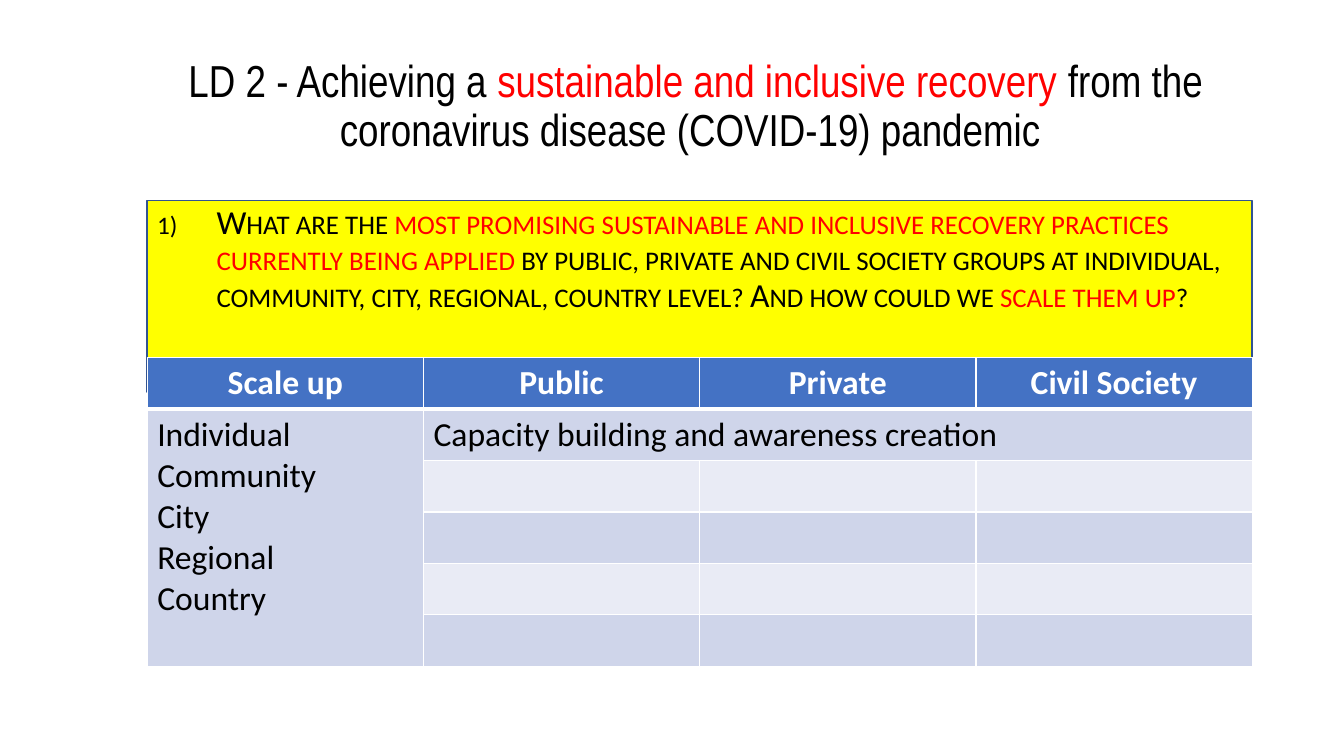
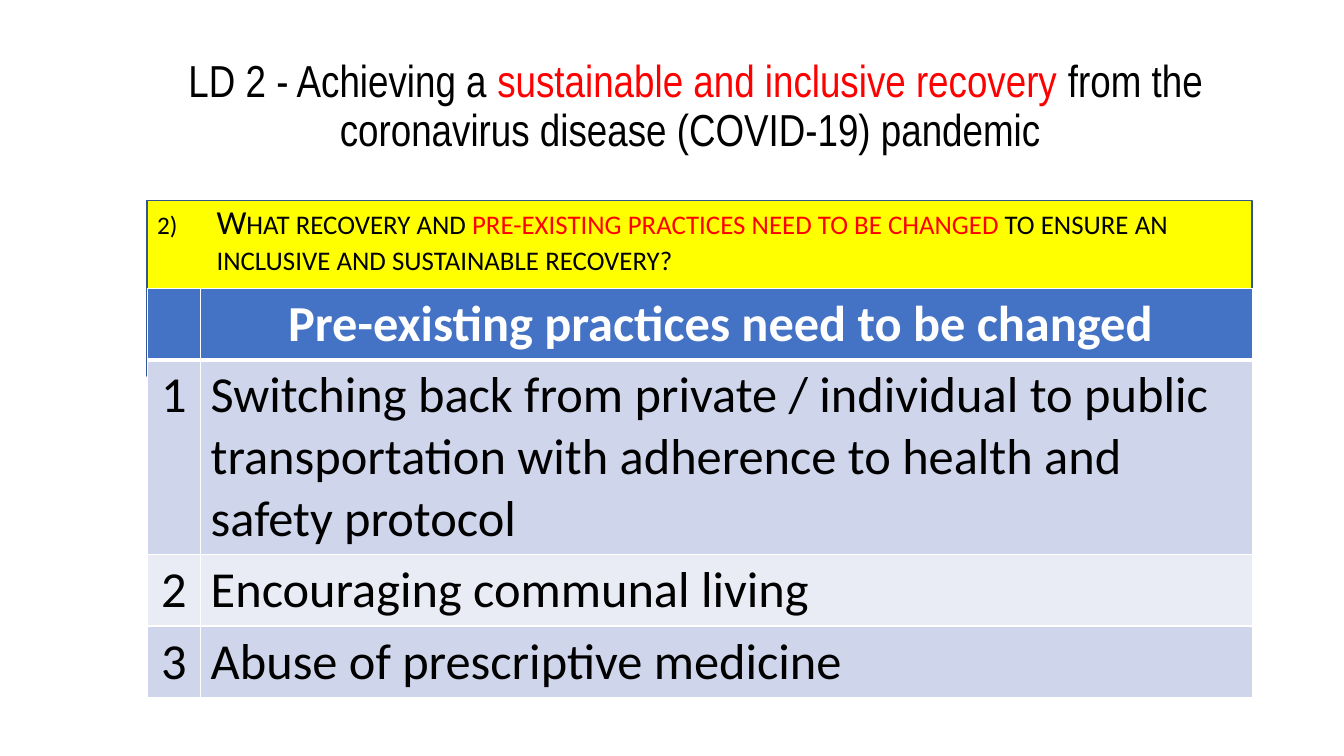
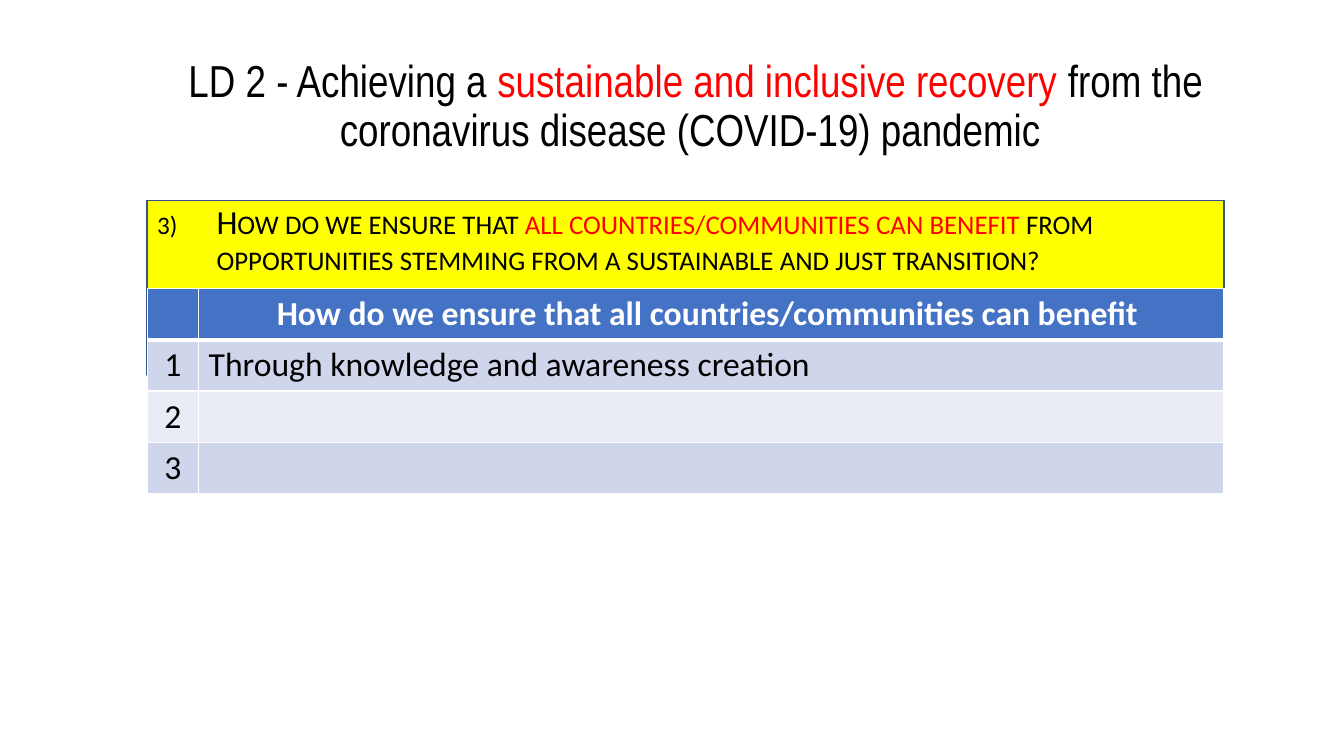
import dataclasses
import lxml.etree
import pptx
import pptx.dml.color
import pptx.enum.shapes
import pptx.enum.text
import pptx.oxml.ns
import pptx.util

ALIGN = pptx.enum.text.PP_ALIGN
ANCHOR = pptx.enum.text.MSO_ANCHOR
FIT = pptx.enum.text.MSO_AUTO_SIZE
SHAPE = pptx.enum.shapes.MSO_SHAPE
SCALE = 9144


@dataclasses.dataclass(frozen=True)
class Theme:
    ink: str = "000000"
    red: str = "FF0000"
    white: str = "FFFFFF"
    band: str = "FFFF00"
    edge: str = "325491"
    head: str = "4472C4"
    odd: str = "CFD5EA"
    even: str = "E9EBF5"
    face: str = "Calibri"
    thin: str = "Arial Narrow"
    title: int = 32
    ask: int = 24
    small: int = 24
    large: int = 36


THEME = Theme()
LEFT = 146
TITLE = ("LD 2 - Achieving a *sustainable and inclusive recovery *"
         "from the coronavirus disease (COVID-19) pandemic ")


def px(*vals):
    return [pptx.util.Emu(val * SCALE) for val in vals]


def rgb(code):
    return pptx.dml.color.RGBColor.from_string(code)


def put(item, **vals):
    for name, val in vals.items():
        setattr(item, name, val)


def tag(root, name, **vals):
    return lxml.etree.SubElement(root, pptx.oxml.ns.qn(name), vals)


def fill(item, code):
    item.fill.solid()
    item.fill.fore_color.rgb = rgb(code)


def style(font, code, face, size, bold=False):
    put(font, name=face, size=pptx.util.Pt(size), bold=bold)
    font.color.rgb = rgb(code)


def write(para, text, face, size):
    for pos, part in enumerate(text.split("*")):
        run = para.add_run()
        run.text = part
        style(run.font, THEME.red if pos % 2 else THEME.ink, face, size)


def add_title(slide):
    shape = slide.shapes.title
    left, top, width, height = px(155, 34, 1070, 145)
    put(shape, left=left, top=top, width=width, height=height)
    frame = shape.text_frame
    put(frame, word_wrap=True, auto_size=FIT.NONE,
        vertical_anchor=ANCHOR.MIDDLE)
    para = frame.paragraphs[0]
    put(para, alignment=ALIGN.CENTER, line_spacing=0.9)
    write(para, TITLE, THEME.thin, THEME.title)


def add_band(slide, width, height):
    shape = slide.shapes.add_shape(
        SHAPE.RECTANGLE, *px(LEFT, 199, width, height))
    shape.shadow.inherit = False
    fill(shape, THEME.band)
    shape.line.color.rgb = rgb(THEME.edge)
    shape.line.width = pptx.util.Pt(1)


def add_ask(slide, num, text):
    box = slide.shapes.add_textbox(*px(LEFT, 199, 1096, 533))
    box.text_frame.word_wrap = True
    para = box.text_frame.paragraphs[0]
    put(para, line_spacing=0.9, space_before=pptx.util.Pt(10))
    write(para, text, THEME.face, THEME.ask)
    for run in para.runs:
        run.font._element.set("cap", "small")
    props = para._p.get_or_add_pPr()
    props.set("marL", str(59 * SCALE))
    props.set("indent", str(-59 * SCALE))
    tag(props, "a:buSzPct", val="75000")
    tag(props, "a:buAutoNum", type="arabicParenR", startAt=str(num))


def add_edges(cell, row):
    props = cell._tc.get_or_add_tcPr()
    sides = {"L": 1, "R": 1, "T": 3 if row == 1 else 1,
             "B": 3 if row == 0 else 1}
    for side, size in sides.items():
        line = tag(props, "a:ln" + side, w=str(pptx.util.Pt(size)))
        tag(tag(line, "a:solidFill"), "a:srgbClr", val=THEME.white)


def set_cell(cell, row, text, size):
    add_edges(cell, row)
    is_head = row == 0
    fill(cell, THEME.head if is_head else
         THEME.odd if row % 2 else THEME.even)
    cell.text = text
    for para in cell.text_frame.paragraphs:
        if is_head or text.isdigit():
            para.alignment = ALIGN.CENTER
        for run in para.runs:
            style(run.font, THEME.white if is_head else THEME.ink,
                  THEME.face, size, is_head)


def add_grid(slide, top, cols, rows, cells, size, spans=()):
    grid = slide.shapes.add_table(
        len(rows), len(cols), *px(LEFT, top, sum(cols), sum(rows))).table
    for col, width in zip(grid.columns, px(*cols)):
        col.width = width
    for row, height in zip(grid.rows, px(*rows)):
        row.height = height
    for row, texts in enumerate(cells):
        for col, text in enumerate(texts):
            set_cell(grid.cell(row, col), row, text, size)
    for first, last in spans:
        grid.cell(*first).merge(grid.cell(*last))


def main():
    deck = pptx.Presentation()
    width, height = px(1333, 750)
    put(deck, slide_width=width, slide_height=height)
    levels = "Individual\nCommunity\nCity\nRegional\nCountry"
    topics = [
        dict(
            ask="What are the *most promising sustainable and inclusive "
                "recovery practices currently being applied *by public, "
                "private and civil society groups at individual, community, "
                "city, regional, country level? And how could we "
                "*scale them up*?",
            high=190,
            grid=dict(
                top=355, cols=[274] * 4, rows=[51] * 6, size=THEME.small,
                cells=[["Scale up", "Public", "Private", "Civil Society"],
                       [levels, "Capacity building and awareness creation",
                        "", ""]] + [[""] * 4] * 4,
                spans=[((1, 0), (5, 0)), ((1, 1), (1, 3))])),
        dict(
            ask="What recovery and *pre-existing practices need to be "
                "changed *to ensure an inclusive and sustainable recovery?",
            high=174,
            grid=dict(
                top=286, cols=[53, 1043], rows=[71, 193, 71, 71],
                size=THEME.large,
                cells=[["", "Pre-existing practices need to be changed "],
                       ["1", "Switching back from private / individual to "
                             "public transportation with adherence to health "
                             "and safety protocol"],
                       ["2", "Encouraging communal living"],
                       ["3", "Abuse of prescriptive medicine"]])),
        dict(
            ask="How do we ensure that *all countries/communities can "
                "benefit *from opportunities stemming from a sustainable "
                "and just transition?",
            high=173,
            grid=dict(
                top=286, cols=[51, 1017], rows=[51] * 4, size=THEME.small,
                cells=[["", "How do we ensure that all countries/communities "
                            "can benefit "],
                       ["1", "Through knowledge and awareness creation"],
                       ["2", ""], ["3", ""]])),
    ]
    for num, topic in enumerate(topics, 1):
        slide = deck.slides.add_slide(deck.slide_layouts[5])
        add_title(slide)
        add_band(slide, sum(topic["grid"]["cols"]), topic["high"])
        add_ask(slide, num, topic["ask"])
        add_grid(slide, **topic["grid"])
    deck.save("out.pptx")


if __name__ == "__main__":
    main()
